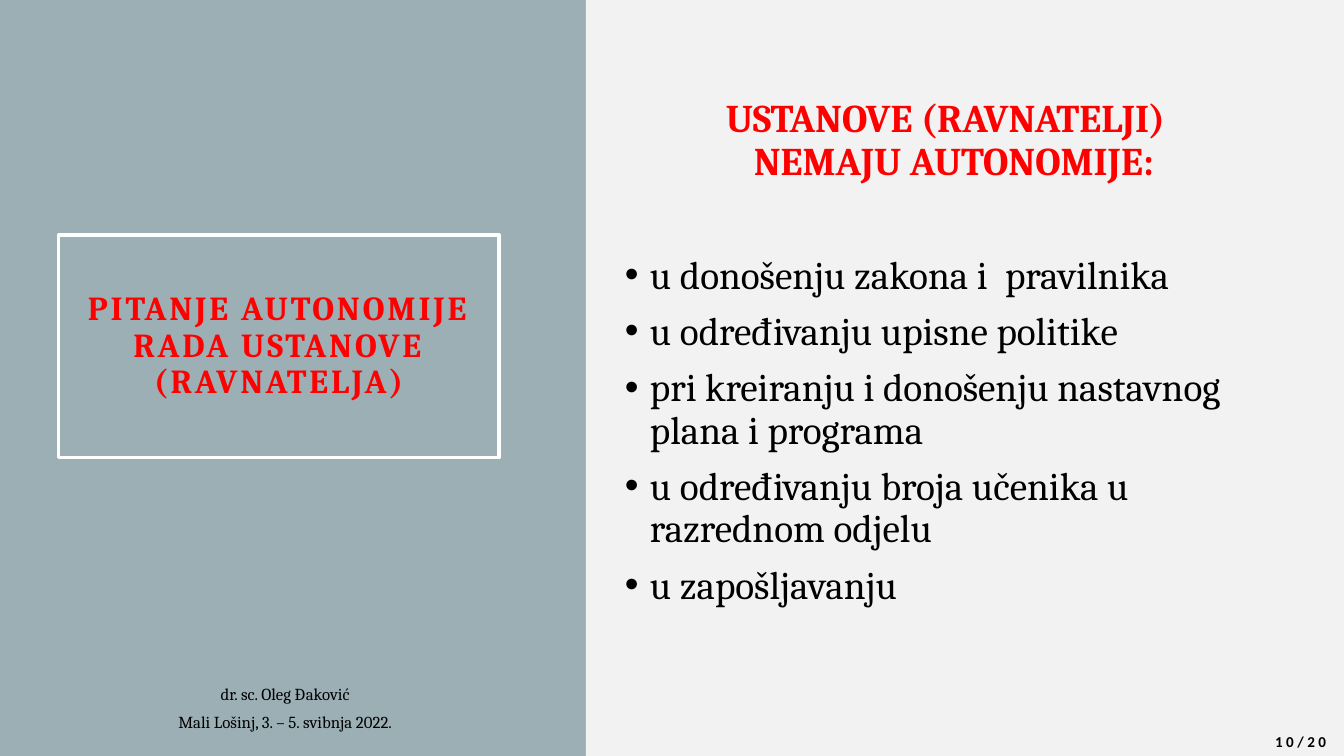
from dataclasses import dataclass

from pptx import Presentation
from pptx.dml.color import RGBColor
from pptx.enum.shapes import MSO_SHAPE
from pptx.enum.text import MSO_ANCHOR, MSO_AUTO_SIZE, PP_ALIGN
from pptx.oxml.xmlchemy import OxmlElement
from pptx.util import Pt


@dataclass(frozen=True)
class Theme:
    background: RGBColor = RGBColor(0x9B, 0xAF, 0xB5)
    panel: RGBColor = RGBColor(0xF2, 0xF2, 0xF2)
    frame: RGBColor = RGBColor(0xFF, 0xFF, 0xFF)
    accent: RGBColor = RGBColor(0xFF, 0, 0)
    text: RGBColor = RGBColor(0, 0, 0)
    serif: str = "Cambria"
    sans: str = "Calibri"
    title: float = 24
    body: float = 28
    footer: float = 12
    page: float = 10.8


THEME = Theme()
SLIDE_W, SLIDE_H = 960, 540
PANEL_LEFT = 418.5
TITLE = "PITANJE AUTONOMIJE RADA USTANOVE (RAVNATELJA)"
HEADING = "USTANOVE (RAVNATELJI)\vNEMAJU AUTONOMIJE:"
LIMITS = [
    "u donošenju zakona i  pravilnika",
    "u određivanju upisne politike",
    "pri kreiranju i donošenju nastavnog plana i programa",
    "u određivanju broja učenika u razrednom odjelu",
    "u zapošljavanju",
]
CREDITS = ["dr. sc. Oleg Đaković", "Mali Lošinj, 3. – 5. svibnja 2022."]


def style(p, size, color, font=THEME.serif, bold=False, align=PP_ALIGN.CENTER):
    p.alignment = align
    p.font.name, p.font.size, p.font.bold = font, Pt(size), bold
    p.font.color.rgb = color


def track(p, points):
    """Widen the letter spacing of a paragraph's runs."""
    for r in p.runs:
        r.font._element.set("spc", str(int(points * 100)))


def hang(p, indent, bullet=None):
    """Set a hanging indent, with a bullet character if one is given."""
    pPr = p._p.get_or_add_pPr()
    pPr.set("marL", str(Pt(indent)))
    pPr.set("indent", str(-Pt(indent)))
    if bullet:
        font, char = OxmlElement("a:buFont"), OxmlElement("a:buChar")
        font.set("typeface", "Arial")
        char.set("char", bullet)
        pPr.insert_element_before(font, "a:tabLst", "a:defRPr", "a:extLst")
        pPr.insert_element_before(char, "a:tabLst", "a:defRPr", "a:extLst")


def add_text(slide, box, lines):
    """Add a wrapping text box with one paragraph per line."""
    tf = slide.shapes.add_textbox(*map(Pt, box)).text_frame
    tf.word_wrap = True
    for i, line in enumerate(lines):
        p = tf.paragraphs[0] if i == 0 else tf.add_paragraph()
        p.text = line
    return tf


def add_title(slide, left, top, width, height):
    sp = slide.shapes.title
    sp.left, sp.top, sp.width, sp.height = map(Pt, (left, top, width, height))
    sp.line.color.rgb, sp.line.width = THEME.frame, Pt(2.5)
    tf = sp.text_frame
    tf.text = TITLE
    tf.word_wrap, tf.auto_size = True, MSO_AUTO_SIZE.NONE
    tf.vertical_anchor = MSO_ANCHOR.MIDDLE
    tf.margin_left = tf.margin_right = tf.margin_top = tf.margin_bottom = Pt(14.4)
    p = tf.paragraphs[0]
    style(p, THEME.title, THEME.accent, bold=True)
    p.line_spacing = 0.9
    track(p, 2)


def add_panel(slide, left, top, width, height):
    sp = slide.shapes.add_shape(MSO_SHAPE.RECTANGLE, *map(Pt, (left, top, width, height)))
    sp.shadow.inherit = False
    sp.fill.solid()
    sp.fill.fore_color.rgb = THEME.panel
    sp.line.fill.background()

    tf = add_text(slide, (left + 20.7, top + 28.8, 472.3, height - 92.8), [HEADING, *LIMITS])
    tf.vertical_anchor = MSO_ANCHOR.MIDDLE
    heading, *limits = tf.paragraphs
    style(heading, THEME.body, THEME.accent, bold=True)
    hang(heading, 12)
    heading.space_after = Pt(41)
    for p in limits:
        style(p, THEME.body, THEME.text, align=PP_ALIGN.LEFT)
        hang(p, 18, "•")
    for p in tf.paragraphs:
        p.line_spacing, p.space_before = 0.9, Pt(10)


def add_credits(slide, *box):
    for p in add_text(slide, box, CREDITS).paragraphs:
        style(p, THEME.footer, THEME.text)
        p.space_after = Pt(6)


def add_page_number(slide, *box):
    p = add_text(slide, box, ["10/20"]).paragraphs[0]
    style(p, THEME.page, THEME.text, THEME.sans, bold=True)
    p.line_spacing, p.space_before = 0.8, Pt(2)
    track(p, 2.5)


def main():
    prs = Presentation()
    prs.slide_width, prs.slide_height = Pt(SLIDE_W), Pt(SLIDE_H)
    s = prs.slides.add_slide(prs.slide_layouts[5])
    s.background.fill.solid()
    s.background.fill.fore_color.rgb = THEME.background
    add_title(s, 41.8, 167.8, 314.6, 159.1)
    add_panel(s, PANEL_LEFT, 0, SLIDE_W - PANEL_LEFT, SLIDE_H)
    add_credits(s, 79.2, 484.6, 249.1, 42.5)
    add_page_number(s, SLIDE_W - 62, SLIDE_H - 18, 62, 18)
    prs.save("out.pptx")


if __name__ == "__main__":
    main()
